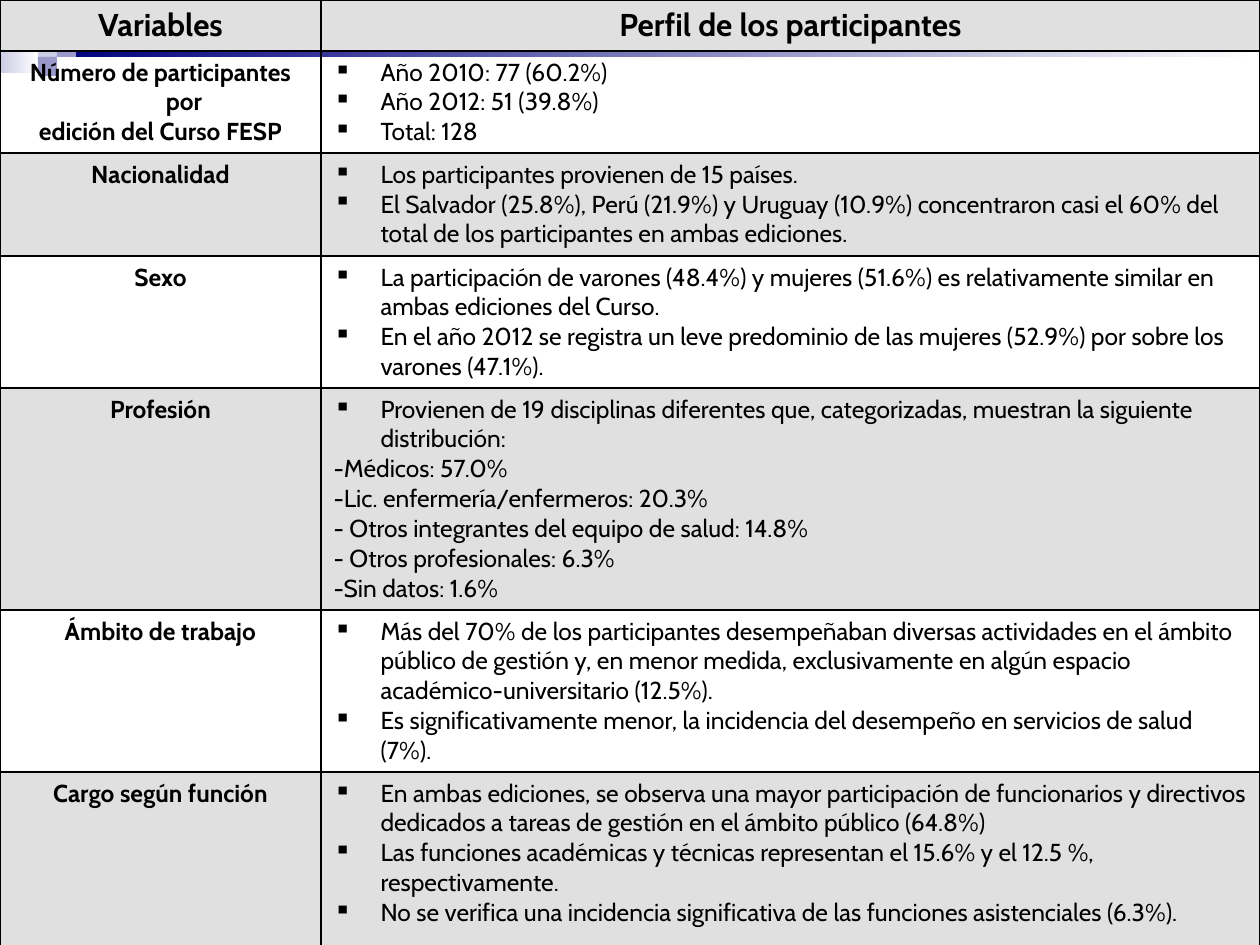
from lxml import etree
from pptx import Presentation
from pptx.dml.color import RGBColor
from pptx.enum.shapes import MSO_SHAPE
from pptx.enum.text import PP_ALIGN
from pptx.oxml.ns import qn
from pptx.util import Emu, Pt

RECTANGLE = MSO_SHAPE.RECTANGLE
LEFT, CENTER = PP_ALIGN.LEFT, PP_ALIGN.CENTER
BLANK_LAYOUT = 6
PX_PER_INCH = 126
FONT = "Cabin"
BLACK, WHITE, GREY = "000000", "FFFFFF", "E0E0E0"
NAVY, LILAC, PALE = "00007D", "9999CC", "CCCCE6"
BULLET = "▪"
HANGING = 47
TAB_STOP = 15
COLUMN_WIDTHS = [321, 939]
ROW_HEIGHTS = [51, 102, 103, 132, 222, 162, 179]

HEADINGS = ["Variables", "Perfil de los participantes"]
PROFILE = [
    (["Número de participantes por", "edición del Curso FESP"],
     ["Año 2010: 77 (60.2%)", "Año 2012: 51 (39.8%)", "Total: 128"]),
    (["Nacionalidad"],
     ["Los participantes provienen de 15 países.",
      "El Salvador (25.8%), Perú (21.9%) y Uruguay (10.9%) concentraron casi "
      "el 60% del total de los participantes en ambas ediciones."]),
    (["Sexo"],
     ["La participación de varones (48.4%) y mujeres (51.6%) es relativamente "
      "similar en ambas ediciones del Curso.",
      "En el año 2012 se registra un leve predominio de las mujeres (52.9%) "
      "por sobre los varones (47.1%)."]),
    (["Profesión"],
     ["Provienen de 19 disciplinas diferentes que, categorizadas, muestran la "
      "siguiente distribución:",
      "-Médicos: 57.0%",
      "-Lic. enfermería/enfermeros: 20.3%",
      "- Otros integrantes del equipo de salud: 14.8%",
      "- Otros profesionales: 6.3%",
      "-Sin datos: 1.6%"]),
    (["Ámbito de trabajo"],
     ["Más del 70% de los participantes desempeñaban diversas actividades en "
      "el ámbito público de gestión y, en menor medida, exclusivamente en "
      "algún espacio académico-universitario (12.5%).",
      "Es significativamente menor, la incidencia del desempeño en servicios "
      "de salud (7%)."]),
    (["Cargo según función"],
     ["En ambas ediciones, se observa una mayor participación de funcionarios "
      "y directivos dedicados a tareas de gestión en el ámbito público (64.8%)",
      "Las funciones académicas y técnicas representan el 15.6% y el 12.5 %, "
      "respectivamente.",
      "No se verifica una incidencia significativa de las funciones "
      "asistenciales (6.3%)."]),
]


def px(length):
    """Turn whole pixels into EMU."""
    return Emu(round(length * 914400 / PX_PER_INCH))


def color(hex_code):
    """Turn a hex string into a colour."""
    return RGBColor.from_string(hex_code)


def add_block(slide, left, top, width, height, start, end=None):
    """Add a borderless rectangle, fading to a second colour if one is given."""
    block = slide.shapes.add_shape(RECTANGLE, px(left), px(top), px(width), px(height))
    block.shadow.inherit = False
    block.line.fill.background()
    if end is None:
        block.fill.solid()
        block.fill.fore_color.rgb = color(start)
        return
    block.fill.gradient()
    block.fill.gradient_angle = 0
    for stop, shade in zip(block.fill.gradient_stops, (start, end)):
        stop.color.rgb = color(shade)


def add_corner_motif(slide):
    """Add the fading band and the small squares behind the table."""
    add_block(slide, 0, 0, 39, 73, PALE, WHITE)
    add_block(slide, 57, 19, 1203, 38, NAVY, WHITE)
    for left, top, shade in [(38, 38, PALE), (57, 38, LILAC), (38, 57, LILAC)]:
        add_block(slide, left, top, 19, 19, shade)


def set_borders(cell):
    """Draw a thin black line on each side of a cell."""
    properties = cell._tc.get_or_add_tcPr()
    for position, side in enumerate(("lnL", "lnR", "lnT", "lnB")):
        border = etree.Element(qn(f"a:{side}"), w=str(Pt(1)))
        fill = etree.SubElement(border, qn("a:solidFill"))
        etree.SubElement(fill, qn("a:srgbClr"), val=BLACK)
        properties.insert(position, border)


def set_hanging_indent(paragraph, bulleted, tabbed):
    """Give a paragraph its hanging indent, bullet and tab stop."""
    properties = paragraph._p.get_or_add_pPr()
    properties.set("marL", str(px(HANGING)))
    properties.set("indent", str(-px(HANGING)))
    if bulleted:
        etree.SubElement(properties, qn("a:buChar"), char=BULLET)
    else:
        etree.SubElement(properties, qn("a:buNone"))
    if tabbed:
        tabs = etree.SubElement(properties, qn("a:tabLst"))
        etree.SubElement(tabs, qn("a:tab"), pos=str(px(TAB_STOP)), algn="l")


def fill_cell(cell, lines, shaded, size=14, label=True):
    """Write centred bold labels or a left-aligned list into a cell."""
    if shaded:
        cell.fill.solid()
        cell.fill.fore_color.rgb = color(GREY)
    else:
        cell.fill.background()
    set_borders(cell)
    frame = cell.text_frame
    for index, line in enumerate(lines):
        paragraph = frame.add_paragraph() if index else frame.paragraphs[0]
        paragraph.alignment = CENTER if label else LEFT
        set_hanging_indent(paragraph, not label and not line.startswith("-"), not label)
        run = paragraph.add_run()
        run.text = line
        run.font.name = FONT
        run.font.size = Pt(size)
        run.font.bold = label
        run.font.color.rgb = color(BLACK)


def add_profile_table(slide):
    """Add the table of variables and participant profile."""
    table = slide.shapes.add_table(
        len(ROW_HEIGHTS), len(COLUMN_WIDTHS), px(0), px(0),
        px(sum(COLUMN_WIDTHS)), px(sum(ROW_HEIGHTS))).table
    for column, width in zip(table.columns, COLUMN_WIDTHS):
        column.width = px(width)
    for row, height in zip(table.rows, ROW_HEIGHTS):
        row.height = px(height)
    for column, heading in enumerate(HEADINGS):
        fill_cell(table.cell(0, column), [heading], True, size=18)
    for row, (variable, findings) in enumerate(PROFILE, start=1):
        shaded = row % 2 == 0
        fill_cell(table.cell(row, 0), variable, shaded)
        fill_cell(table.cell(row, 1), findings, shaded, label=False)


def main():
    """Build and save the slide."""
    presentation = Presentation()
    presentation.slide_width, presentation.slide_height = px(1260), px(945)
    slide = presentation.slides.add_slide(presentation.slide_layouts[BLANK_LAYOUT])
    add_corner_motif(slide)
    add_profile_table(slide)
    presentation.save("out.pptx")


if __name__ == "__main__":
    main()
